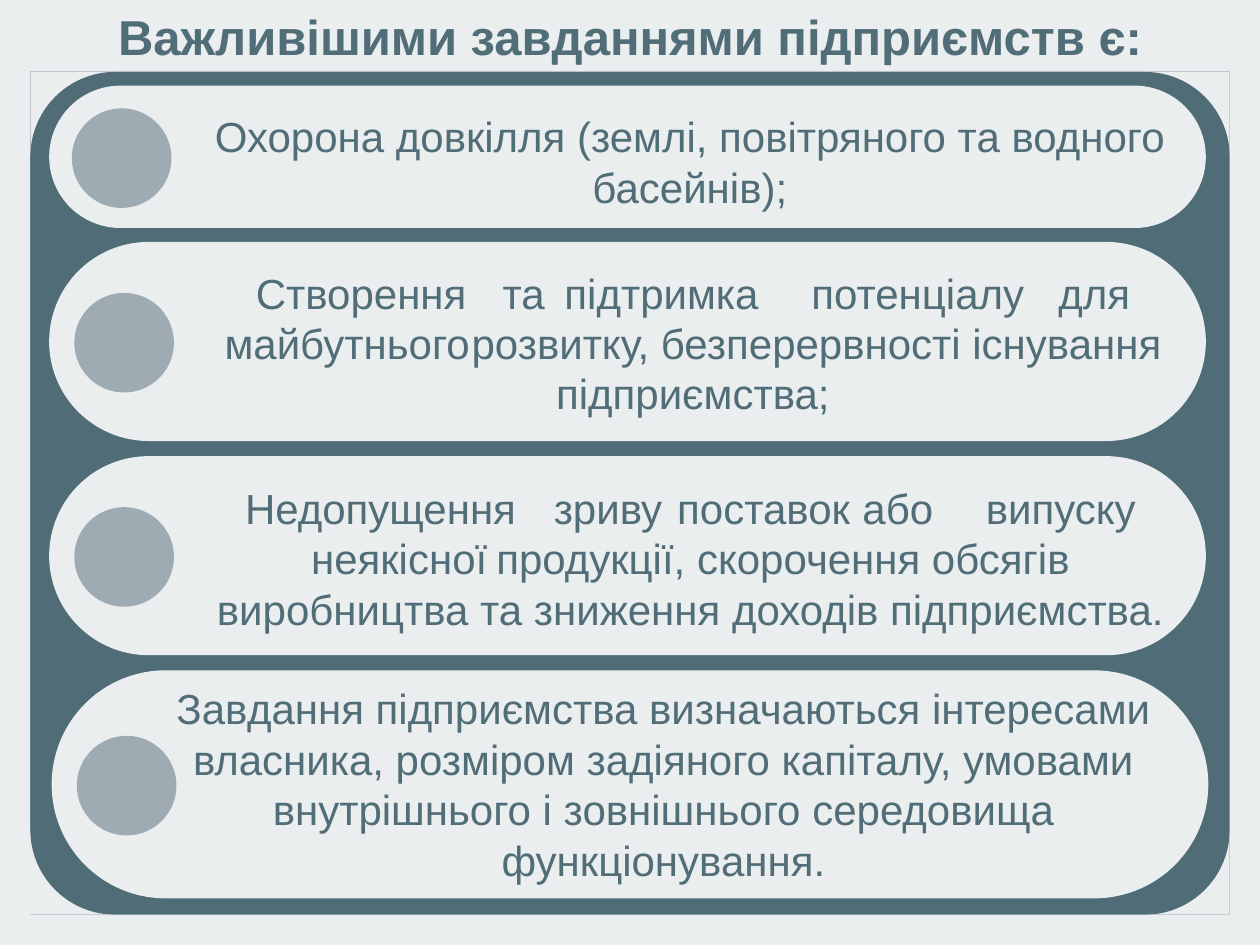
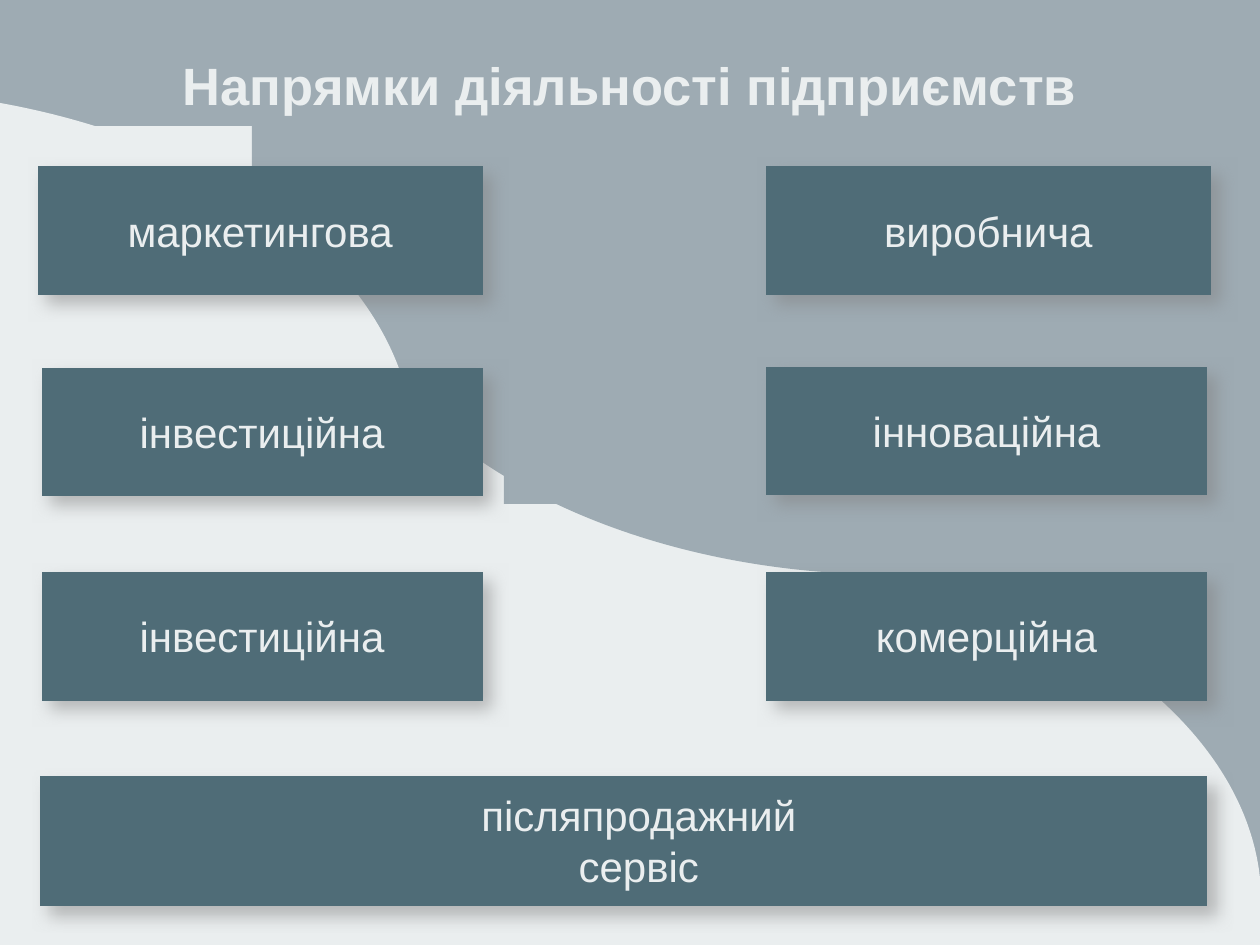
"""Build two slides on the tasks and lines of activity of enterprises."""
from lxml import etree
from pptx import Presentation
from pptx.dml.color import RGBColor
from pptx.enum.shapes import MSO_SHAPE as SHAPE
from pptx.enum.text import MSO_ANCHOR as ANCHOR, PP_ALIGN as ALIGN
from pptx.oxml.ns import qn
from pptx.util import Inches, Pt

TEAL, PALE, GREY, INK = "4F6C77", "EAEEEF", "9EABB3", "516D77"
FONT = "Arial"
TAB = 0.49


def paint(sp, color):
    sp.shadow.inherit = False
    sp.fill.solid()
    sp.fill.fore_color.rgb = RGBColor.from_string(color)
    sp.line.fill.background()
    return sp


def add_text(s, at, lines, color, size=24, bold=False):
    tf = s.shapes.add_textbox(*map(Inches, at)).text_frame
    tf.word_wrap = True
    tf.vertical_anchor = ANCHOR.TOP
    for i, line in enumerate(lines):
        p = tf.paragraphs[0] if i == 0 else tf.add_paragraph()
        p.alignment = ALIGN.CENTER
        if "\t" in line:
            tabs = etree.SubElement(p._p.get_or_add_pPr(), qn("a:tabLst"))
            for n in range(1, 15):
                etree.SubElement(tabs, qn("a:tab"), pos=str(Inches(n * TAB)), algn="l")
        r = p.add_run()
        r.text = line
        r.font.name = FONT
        r.font.size = Pt(size)
        r.font.bold = bold
        r.font.color.rgb = RGBColor.from_string(color)


prs = Presentation()
prs.slide_width, prs.slide_height = Inches(10), Inches(7.5)
slides = []
for color in (TEAL, PALE):
    s = prs.slides.add_slide(prs.slide_layouts[6])
    s.background.fill.solid()
    s.background.fill.fore_color.rgb = RGBColor.from_string(color)
    slides.append(s)
tasks, areas = slides

left, top, right, bottom = 0.24, 0.57, 9.76, 7.26
wedge, disc = 0.66, 1.35
corners = [(0, 1, 0), (1, 0, 180), (1, 1, 270), (0, 0, 90)]
for at_right, at_bottom, angle in corners:
    for kind, size, color in ((SHAPE.RIGHT_TRIANGLE, wedge, PALE), (SHAPE.OVAL, disc, TEAL)):
        x = right - size if at_right else left
        y = bottom - size if at_bottom else top
        sp = paint(tasks.shapes.add_shape(kind, *map(Inches, (x, y, size, size))), color)
        sp.rotation = angle

bands = [(0, 0, 10, top), (0, 0, left, 7.5), (right, 0, left, 7.5), (0, bottom, 10, 0.24)]
for at in bands:
    paint(tasks.shapes.add_shape(SHAPE.RECTANGLE, *map(Inches, at)), PALE)
add_text(tasks, (0.24, 0, 9.52, 0.57), ["Важливішими завданнями підприємств є:"], INK, 28, True)

pills = [
    (0.39, 0.68, 1.13, 0.57, (1.38, 0.83, 8.19, 0.82),
     ["Охорона довкілля (землі, повітряного та водного басейнів);"]),
    (0.39, 1.92, 1.58, 0.59, (1.52, 2.07, 7.96, 1.31),
     ["Cтворення\tта\tпідтримка\tпотенціалу\tдля",
      "майбутнього\tрозвитку, безперервності існування підприємства;"]),
    (0.39, 3.62, 1.58, 0.59, (1.38, 3.78, 8.2, 1.3),
     ["Недопущення\tзриву\tпоставок\tабо\tвипуску",
      "неякісної\tпродукції, скорочення обсягів виробництва та зниження доходів підприємства."]),
    (0.41, 5.32, 1.81, 0.61, (0.84, 5.37, 8.85, 1.75),
     ["Завдання підприємства визначаються інтересами власника, розміром задіяного капіталу, "
      "умовами внутрішнього і зовнішнього середовища функціонування."]),
]
dot = 0.79
for x, y, height, dot_x, text_at, lines in pills:
    pill = tasks.shapes.add_shape(SHAPE.ROUNDED_RECTANGLE, *map(Inches, (x, y, 9.18, height)))
    pill.adjustments[0] = 0.5
    paint(pill, PALE)
    dot_y = y + (height - dot) / 2 + 0.01
    paint(tasks.shapes.add_shape(SHAPE.OVAL, *map(Inches, (dot_x, dot_y, dot, dot))), GREY)
    add_text(tasks, text_at, lines, INK)

wave = [
    (10, 7.44), (9.86, 7.07), (9.72, 6.79), (9.58, 6.54), (9.48, 6.27), (9.37, 6.08),
    (9.19, 5.88), (8.92, 5.65), (8.59, 5.43), (8.27, 5.24), (8, 5.1), (7.67, 4.96),
    (7.28, 4.83), (6.88, 4.72), (6.41, 4.63), (6.04, 4.55), (5.72, 4.45), (5.32, 4.31),
    (4.99, 4.11), (4.66, 3.89), (4.37, 3.7), (4.01, 3.4), (3.65, 3.11), (3.34, 2.86),
    (2.98, 2.53), (2.65, 2.23), (2.37, 1.93), (2.11, 1.68), (1.86, 1.49), (1.58, 1.31),
    (1.2, 1.17), (0.86, 1.11), (0.47, 1.05), (0.2, 1.05), (0, 1.07), (0, 0), (10, 0),
]
fb = areas.shapes.build_freeform(10, 7.5, scale=Inches(1))
fb.add_line_segments(wave, close=True)
paint(fb.convert_to_shape(), GREY)
curves = [
    (SHAPE.OVAL, (0.47, 4.27, 9.54, 5.77), PALE),
    (SHAPE.OVAL, (2.59, -1.21, 8.95, 5.77), GREY),
    (SHAPE.OVAL, (-5.73, 0.71, 9.02, 5.77), PALE),
    (SHAPE.RECTANGLE, (8.79, 7.27, 1.21, 0.23), PALE),
]
for kind, at, color in curves:
    paint(areas.shapes.add_shape(kind, *map(Inches, at)), color)
add_text(areas, (0.52, 0.37, 8.96, 0.6), ["Напрямки діяльності підприємств"], PALE, 30, True)

boxes = [
    ((0.32, 6.16, 9.26, 1.03), (3.57, 6.22, 3, 0.92), ["післяпродажний", "сервіс"]),
]
cells = [
    (6.08, 2.91, 3.5, "інноваційна"),
    (6.08, 1.32, 3.53, "виробнича"),
    (0.3, 1.32, 3.53, "маркетингова"),
    (0.33, 2.92, 3.5, "інвестиційна"),
    (0.33, 4.54, 3.5, "інвестиційна"),
    (6.08, 4.54, 3.5, "комерційна"),
]
for x, y, width, label in cells:
    boxes.append(((x, y, width, 1.02), (x, y + 0.26, width, 0.5), [label]))
for at, text_at, lines in boxes:
    sp = paint(areas.shapes.add_shape(SHAPE.FLOWCHART_PROCESS, *map(Inches, at)), TEAL)
    effects = sp._element.spPr.find(qn("a:effectLst"))
    shadow = etree.SubElement(effects, qn("a:outerShdw"), blurRad=str(Pt(10)),
                              dist=str(Pt(7.1)), dir="2700000", algn="ctr", rotWithShape="0")
    tint = etree.SubElement(shadow, qn("a:srgbClr"), val="808080")
    etree.SubElement(tint, qn("a:alpha"), val="50000")
    add_text(areas, text_at, lines, PALE)

prs.save("out.pptx")
